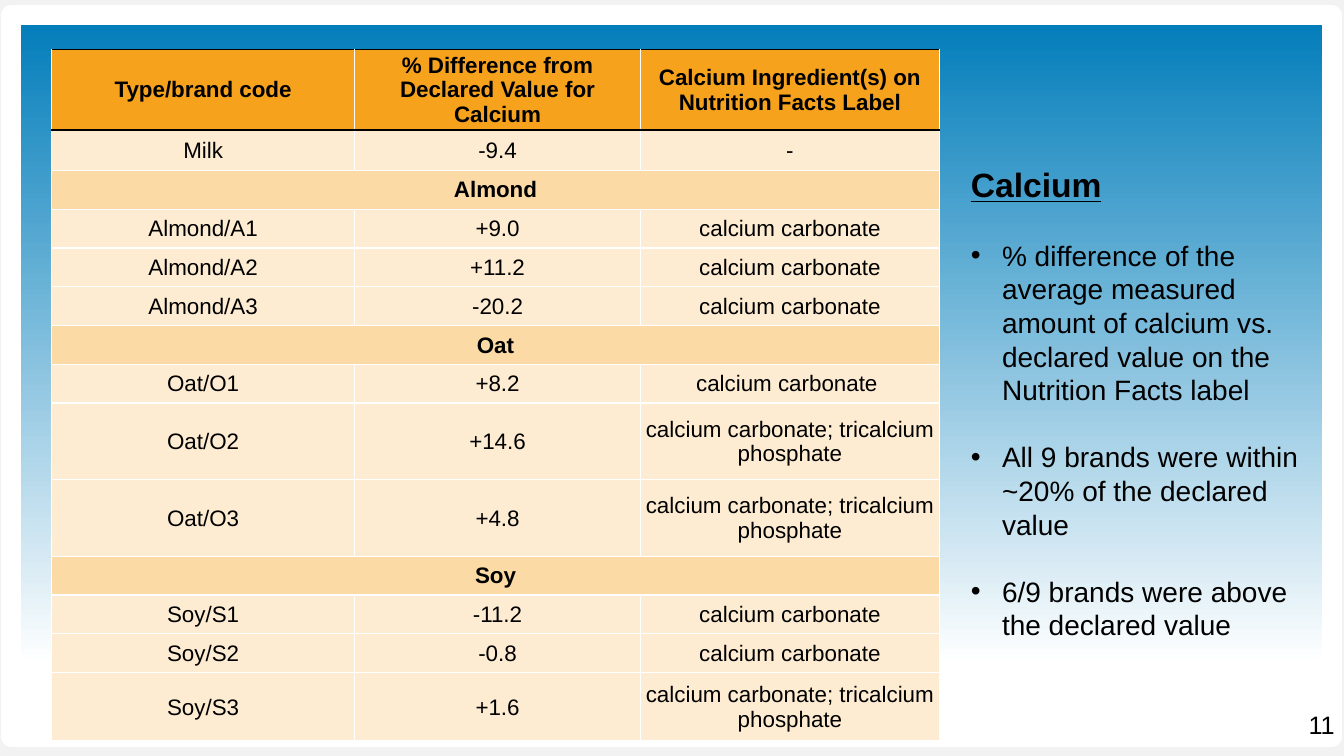
from lxml import etree
from pptx import Presentation
from pptx.dml.color import RGBColor
from pptx.enum.shapes import MSO_SHAPE
from pptx.enum.text import MSO_ANCHOR, MSO_AUTO_SIZE, PP_ALIGN
from pptx.oxml.ns import qn
from pptx.util import Inches, Pt

RECTANGLE = MSO_SHAPE.RECTANGLE
MIDDLE = MSO_ANCHOR.MIDDLE
FIT_SHAPE = MSO_AUTO_SIZE.SHAPE_TO_FIT_TEXT
CENTER = PP_ALIGN.CENTER
BLACK, WHITE, BLUE = "000000", "FFFFFF", "007CBA"
ORANGE, PEACH, CREAM = "F6A21D", "FBDAA5", "FDECD2"


def color(value):
    return RGBColor.from_string(value)


def add_run(paragraph, text, size, bold=False, underline=False):
    run = paragraph.add_run()
    run.text = text
    run.font.name = "Arial"
    run.font.size = Pt(size)
    run.font.bold = bold
    run.font.underline = underline
    run.font.color.rgb = color(BLACK)


presentation = Presentation()
presentation.slide_width = Inches(13.33)
presentation.slide_height = Inches(7.5)
slide = presentation.slides.add_slide(presentation.slide_layouts[6])
slide.background.fill.solid()
slide.background.fill.fore_color.rgb = color("F2F2F2")

panel = slide.shapes.add_shape(RECTANGLE, Inches(0.11), Inches(0.15), Inches(13.1), Inches(7.16))
panel.shadow.inherit = False
panel.fill.gradient()
panel.fill.gradient_angle = 270
for stop, position, shade in zip(panel.fill.gradient_stops, (0, 0.9), (BLUE, WHITE)):
    stop.position = position
    stop.color.rgb = color(shade)
panel.line.color.rgb = color(WHITE)
panel.line.width = Pt(14)

CARBONATE = "calcium carbonate"
BOTH = "calcium carbonate; tricalcium phosphate"
rows = [
    (0.8, "Type/brand code", "% Difference from Declared Value for Calcium",
     "Calcium Ingredient(s) on Nutrition Facts Label"),
    (0.4, "Milk", "-9.4", "-"),
    (0.385, "Almond"),
    (0.385, "Almond/A1", "+9.0", CARBONATE),
    (0.385, "Almond/A2", "+11.2", CARBONATE),
    (0.385, "Almond/A3", "-20.2", CARBONATE),
    (0.385, "Oat"),
    (0.385, "Oat/O1", "+8.2", CARBONATE + " "),
    (0.76, "Oat/O2", "+14.6", BOTH),
    (0.76, "Oat/O3", "+4.8", BOTH),
    (0.385, "Soy"),
    (0.385, "Soy/S1", "-11.2", CARBONATE),
    (0.385, "Soy/S2", "-0.8", CARBONATE),
    (0.68, "Soy/S3", "+1.6", BOTH),
]
column_widths = (3.01, 2.83, 2.97)
table = slide.shapes.add_table(len(rows), len(column_widths), Inches(0.51), Inches(0.49),
                               Inches(8.82), Inches(6.85)).table
for column, width in zip(table.columns, column_widths):
    column.width = Inches(width)

for row_index, (height, *texts) in enumerate(rows):
    table.rows[row_index].height = Inches(height)
    is_header = row_index == 0
    is_group = len(texts) == 1
    if is_group:
        table.cell(row_index, 0).merge(table.cell(row_index, 2))
    for column_index in range(len(column_widths)):
        cell = table.cell(row_index, column_index)
        cell.margin_left = cell.margin_right = cell.margin_top = Inches(0.01)
        cell.margin_bottom = 0
        cell.vertical_anchor = MIDDLE
        if column_index < len(texts):
            paragraph = cell.text_frame.paragraphs[0]
            paragraph.alignment = CENTER
            add_run(paragraph, texts[column_index], 16, bold=is_header or is_group)
        properties = cell._tc.get_or_add_tcPr()
        edges = {
            "a:lnL": WHITE,
            "a:lnR": WHITE,
            "a:lnT": BLACK if row_index < 2 else WHITE,
            "a:lnB": BLACK if is_header else WHITE,
        }
        for edge, shade in edges.items():
            line = etree.SubElement(properties, qn(edge), w=str(Pt(1)))
            fill = etree.SubElement(line, qn("a:solidFill"))
            etree.SubElement(fill, qn("a:srgbClr"), val=shade)
        cell.fill.solid()
        cell.fill.fore_color.rgb = color(ORANGE if is_header else PEACH if is_group else CREAM)

notes_box = slide.shapes.add_textbox(Inches(9.53), Inches(1.58), Inches(3.52), Inches(4.88))
notes_frame = notes_box.text_frame
notes_frame.word_wrap = True
notes_frame.auto_size = FIT_SHAPE
add_run(notes_frame.paragraphs[0], "Calcium", 24, bold=True, underline=True)
for point in (
    "% difference of the average measured amount of calcium vs. declared value "
    "on the Nutrition Facts label",
    "All 9 brands were within ~20% of the declared value",
    "6/9 brands were above the declared value",
):
    paragraph = notes_frame.add_paragraph()
    paragraph.space_before = Pt(24)
    add_run(paragraph, point, 20)
    properties = paragraph._p.get_or_add_pPr()
    properties.set("marL", str(Inches(0.31)))
    properties.set("indent", str(-Inches(0.31)))
    etree.SubElement(properties, qn("a:buFont"), typeface="Arial")
    etree.SubElement(properties, qn("a:buChar"), char="•")

number_box = slide.shapes.add_textbox(Inches(12.88), Inches(6.99), Inches(0.46), Inches(0.4))
number_box.text_frame.word_wrap = False
number_box.text_frame.auto_size = FIT_SHAPE
add_run(number_box.text_frame.paragraphs[0], "11", 18)

presentation.save("out.pptx")
